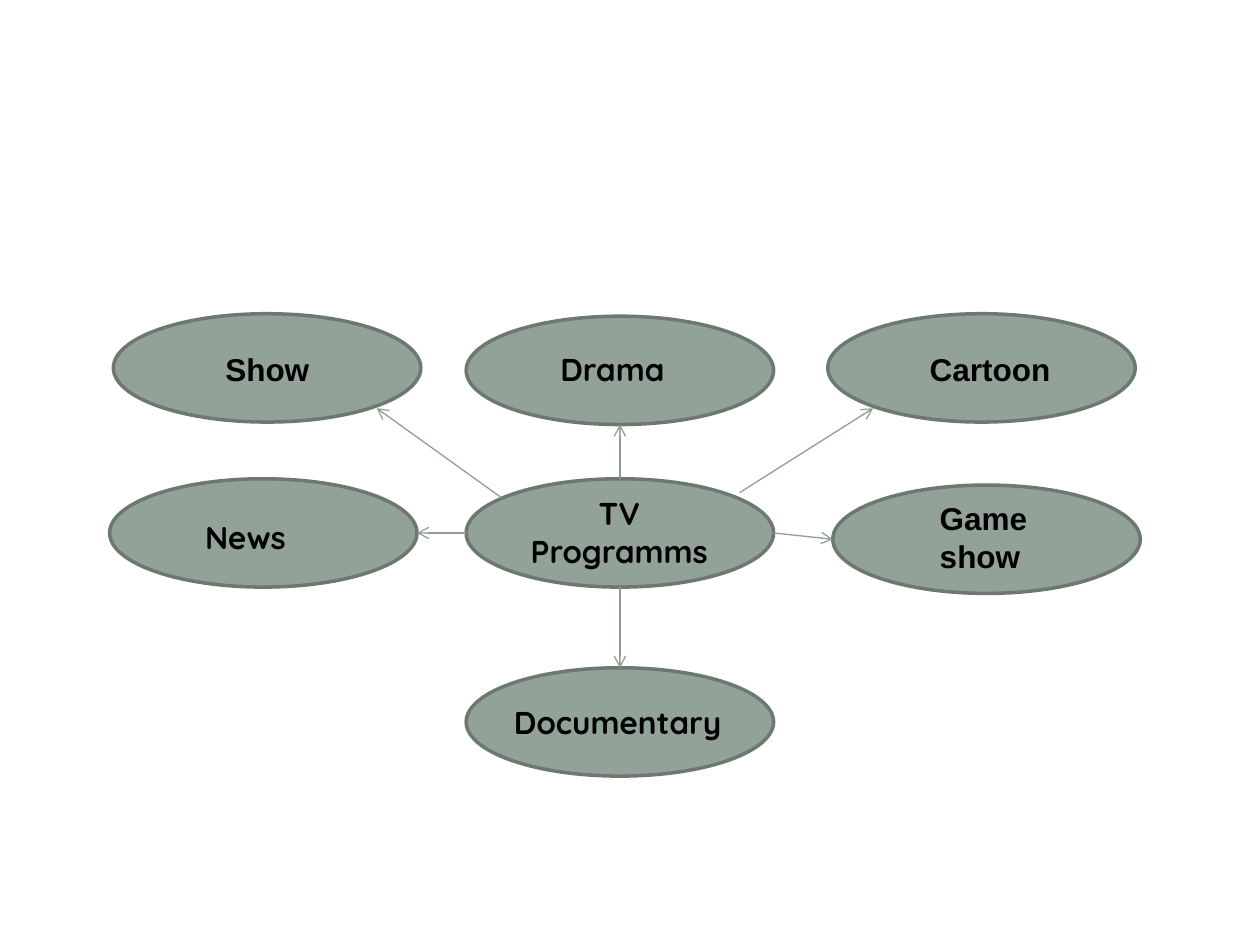
from pptx import Presentation
from pptx.dml.color import RGBColor
from pptx.enum.shapes import MSO_CONNECTOR as Connector, MSO_SHAPE as Shape
from pptx.enum.text import MSO_AUTO_SIZE as AutoSize, PP_ALIGN as Align
from pptx.oxml.ns import qn
from pptx.util import Inches, Pt
from lxml.etree import SubElement

COLORS = {"fill": "93A299", "outline": "6D7871", "arrow": "8F9F96", "text": "000000"}
NODE_WIDTH, NODE_HEIGHT = 2.44, 0.86
CENTER_LEFT, CENTER_TOP = 3.7, 3.8
CENTER_X = CENTER_LEFT + NODE_WIDTH / 2
CENTER_Y = CENTER_TOP + NODE_HEIGHT / 2
DRAMA_TOP, DOCUMENTARY_TOP = 2.51, 5.3
NEWS_LEFT = 0.87
GAME_LEFT, GAME_TOP = 6.61, 3.85

NODES = [
    (0.9, 2.49),
    (CENTER_LEFT, DRAMA_TOP),
    (6.57, 2.49),
    (NEWS_LEFT, CENTER_TOP),
    (CENTER_LEFT, CENTER_TOP),
    (GAME_LEFT, GAME_TOP),
    (CENTER_LEFT, DOCUMENTARY_TOP),
]
LABELS = [
    ("Show", 1.69, 2.73, 0.87, 0.4, "Arial", Align.LEFT),
    ("Drama", 4.35, 2.73, 1.37, 0.4, "Quicksand", Align.LEFT),
    ("Cartoon", 7.28, 2.73, 1.16, 0.4, "Arial", Align.LEFT),
    ("News", 1.53, 4.06, 1.37, 0.4, "Quicksand", Align.LEFT),
    ("TV Programms", 4.11, 3.87, 1.61, 0.7, "Quicksand", Align.CENTER),
    ("Game show", 7.36, 3.91, 1.35, 0.7, "Arial", Align.LEFT),
    ("Documentary", 3.98, 5.53, 1.88, 0.4, "Quicksand", Align.LEFT),
]
ARROWS = [
    ((CENTER_X, CENTER_TOP), (CENTER_X, DRAMA_TOP + NODE_HEIGHT)),
    ((CENTER_X, CENTER_TOP + NODE_HEIGHT), (CENTER_X, DOCUMENTARY_TOP)),
    ((CENTER_LEFT, CENTER_Y), (NEWS_LEFT + NODE_WIDTH, CENTER_Y)),
    ((CENTER_LEFT + NODE_WIDTH, CENTER_Y), (GAME_LEFT, GAME_TOP + NODE_HEIGHT / 2)),
    ((3.98, 3.95), (2.99, 3.24)),
    ((5.87, 3.91), (6.93, 3.24)),
]


def color(name):
    """Return the named palette colour."""
    return RGBColor.from_string(COLORS[name])


def add_node(page, left, top):
    """Add one ellipse of the mind map."""
    node = page.shapes.add_shape(
        Shape.OVAL, Inches(left), Inches(top), Inches(NODE_WIDTH), Inches(NODE_HEIGHT)
    )
    node.shadow.inherit = False
    node.fill.solid()
    node.fill.fore_color.rgb = color("fill")
    node.line.color.rgb = color("outline")
    node.line.width = Pt(2)


def add_label(page, text, left, top, width, height, font, align):
    """Add the bold caption of a node."""
    box = page.shapes.add_textbox(Inches(left), Inches(top), Inches(width), Inches(height))
    frame = box.text_frame
    frame.text = text
    frame.word_wrap = text not in ("Show", "Cartoon")
    frame.auto_size = AutoSize.SHAPE_TO_FIT_TEXT
    para = frame.paragraphs[0]
    para.alignment = align
    span = para.runs[0]
    span.font.name = font
    span.font.size = Pt(18)
    span.font.bold = True
    span.font.color.rgb = color("text")


def add_arrow(page, start, end):
    """Add a thin straight line with an open arrowhead at its end."""
    points = [Inches(value) for value in (*start, *end)]
    arrow = page.shapes.add_connector(Connector.STRAIGHT, *points)
    arrow.line.color.rgb = color("arrow")
    arrow.line.width = Pt(0.75)
    SubElement(arrow.line._get_or_add_ln(), qn("a:tailEnd"), type="arrow")
    SubElement(arrow._element.spPr, qn("a:effectLst"))


def main():
    """Build the mind map of TV programmes."""
    deck = Presentation()
    deck.slide_width, deck.slide_height = Inches(10), Inches(7.5)
    page = deck.slides.add_slide(deck.slide_layouts[6])
    for node in NODES:
        add_node(page, *node)
    for label in LABELS:
        add_label(page, *label)
    for arrow in ARROWS:
        add_arrow(page, *arrow)
    deck.save("out.pptx")


if __name__ == "__main__":
    main()
